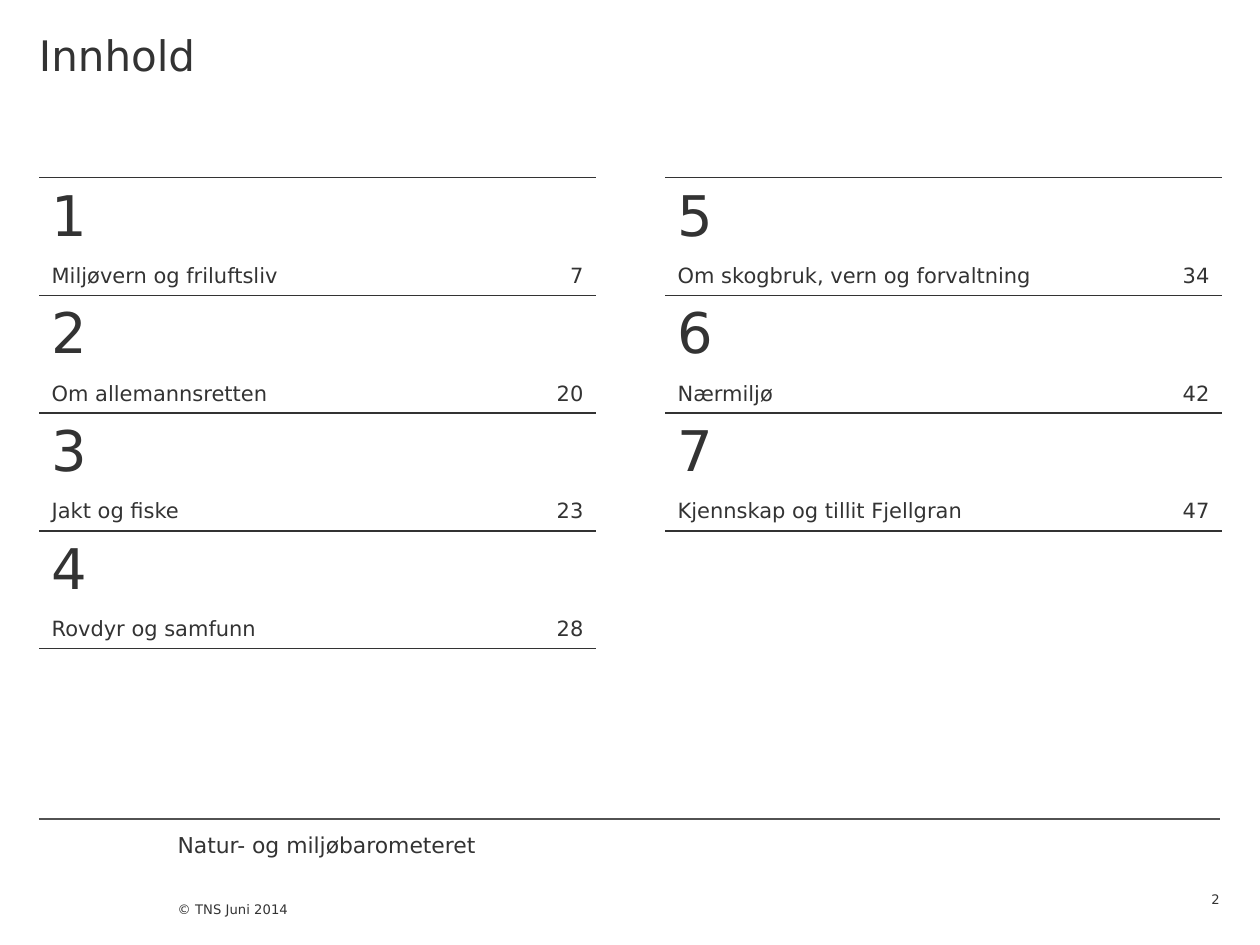
from typing import NamedTuple

from lxml import etree
from pptx import Presentation
from pptx.dml.color import RGBColor
from pptx.enum.shapes import MSO_CONNECTOR
from pptx.enum.text import MSO_ANCHOR, PP_ALIGN
from pptx.oxml.ns import qn
from pptx.slide import Slide
from pptx.table import _Cell
from pptx.text.text import TextFrame
from pptx.util import Pt

LEFT, RIGHT = PP_ALIGN.LEFT, PP_ALIGN.RIGHT
TOP, BOTTOM = MSO_ANCHOR.TOP, MSO_ANCHOR.BOTTOM
STRAIGHT = MSO_CONNECTOR.STRAIGHT

INK = RGBColor(0x33, 0x33, 0x33)
RULE_GREY = RGBColor(0x52, 0x52, 0x52)
WHITE = RGBColor(0xFF, 0xFF, 0xFF)

FONT = "DejaVu Sans"
NO_TABLE_STYLE = "{2D5ABB26-0587-4C30-8999-92F81FD0307C}"
MARGIN_LEFT = 22.3
MARGIN_RIGHT = 697
TABLE_TOP = 101.5
COLUMN_WIDTHS = (258.5, 59.8)
NUMBER_HEIGHT, CHAPTER_HEIGHT = 39.6, 20.2


class Label(NamedTuple):
    text: str
    left: float
    top: float
    width: float
    height: float
    size: float
    anchor: MSO_ANCHOR = TOP
    align: PP_ALIGN = LEFT
    inset_top: float = 0
    inset_bottom: float = 0


class Chapter(NamedTuple):
    number: int
    title: str
    page: int


class Contents(NamedTuple):
    left: float
    chapters: list[Chapter]


LABELS = [
    Label("Natur- og miljøbarometeret", 101.5, 475.2, 238.3, 30.2, 12.5),
    Label("© TNS Juni 2014", 101.5, 498.2, 200.2, 41.8, 7.5, BOTTOM, inset_bottom=22.3),
    Label("Innhold", MARGIN_LEFT, 0, 674.7, 81.4, 24, inset_top=16.6),
    Label("2", 657.4, 498.2, 39.6, 20.2, 7.5, BOTTOM, RIGHT),
]

CONTENTS = [
    Contents(MARGIN_LEFT, [
        Chapter(1, "Miljøvern og friluftsliv", 7),
        Chapter(2, "Om allemannsretten", 20),
        Chapter(3, "Jakt og fiske", 23),
        Chapter(4, "Rovdyr og samfunn", 28),
    ]),
    Contents(380, [
        Chapter(5, "Om skogbruk, vern og forvaltning", 34),
        Chapter(6, "Nærmiljø", 42),
        Chapter(7, "Kjennskap og tillit Fjellgran", 47),
    ]),
]


def write(frame: TextFrame, text: str, size: float, align: PP_ALIGN = LEFT) -> None:
    paragraph = frame.paragraphs[0]
    paragraph.text = text
    paragraph.alignment = align
    paragraph.font.name = FONT
    paragraph.font.size = Pt(size)
    paragraph.font.color.rgb = INK


def add_label(slide: Slide, label: Label) -> None:
    shape = slide.shapes.add_textbox(
        Pt(label.left), Pt(label.top), Pt(label.width), Pt(label.height))
    frame = shape.text_frame
    frame.word_wrap = True
    frame.vertical_anchor = label.anchor
    frame.margin_left = frame.margin_right = 0
    frame.margin_top = Pt(label.inset_top)
    frame.margin_bottom = Pt(label.inset_bottom)
    write(frame, label.text, label.size, label.align)


def add_footer_rule(slide: Slide) -> None:
    rule = slide.shapes.add_connector(
        STRAIGHT, Pt(MARGIN_LEFT), Pt(468), Pt(MARGIN_RIGHT), Pt(468))
    rule.line.color.rgb = RULE_GREY
    rule.line.width = Pt(0.75)
    etree.SubElement(rule._element.spPr, qn("a:effectLst"))


def add_border(cell: _Cell, side: str) -> None:
    """Rule one side of a cell; side is "T" or "B"."""
    border = etree.Element(qn(f"a:ln{side}"), w=str(Pt(1)))
    fill = etree.SubElement(border, qn("a:solidFill"))
    etree.SubElement(fill, qn("a:srgbClr"), val=str(INK))
    cell._tc.get_or_add_tcPr().insert(0, border)


def add_contents(slide: Slide, contents: Contents) -> None:
    """Draw a table with a number row and a title row for each chapter."""
    chapters = contents.chapters
    height = len(chapters) * (NUMBER_HEIGHT + CHAPTER_HEIGHT)
    table = slide.shapes.add_table(
        2 * len(chapters), 2, Pt(contents.left), Pt(TABLE_TOP),
        Pt(sum(COLUMN_WIDTHS)), Pt(height)).table
    table.first_row = table.horz_banding = False
    table._tbl.tblPr.find(qn("a:tableStyleId")).text = NO_TABLE_STYLE
    for column, width in zip(table.columns, COLUMN_WIDTHS):
        column.width = Pt(width)
    for cell in table.iter_cells():
        cell.fill.solid()
        cell.fill.fore_color.rgb = WHITE

    for index, chapter in enumerate(chapters):
        number_row, title_row = 2 * index, 2 * index + 1
        table.rows[number_row].height = Pt(NUMBER_HEIGHT)
        table.rows[title_row].height = Pt(CHAPTER_HEIGHT)
        write(table.cell(number_row, 0).text_frame, str(chapter.number), 32)
        write(table.cell(title_row, 0).text_frame, chapter.title, 12)
        write(table.cell(title_row, 1).text_frame, str(chapter.page), 12, RIGHT)
        for column in range(2):
            add_border(table.cell(title_row, column), "B")
    for column in range(2):
        add_border(table.cell(0, column), "T")


def main() -> None:
    presentation = Presentation()
    presentation.slide_width, presentation.slide_height = Pt(720), Pt(540)
    slide = presentation.slides.add_slide(presentation.slide_layouts[6])
    add_footer_rule(slide)
    for label in LABELS:
        add_label(slide, label)
    for contents in CONTENTS:
        add_contents(slide, contents)
    presentation.save("out.pptx")


if __name__ == "__main__":
    main()
